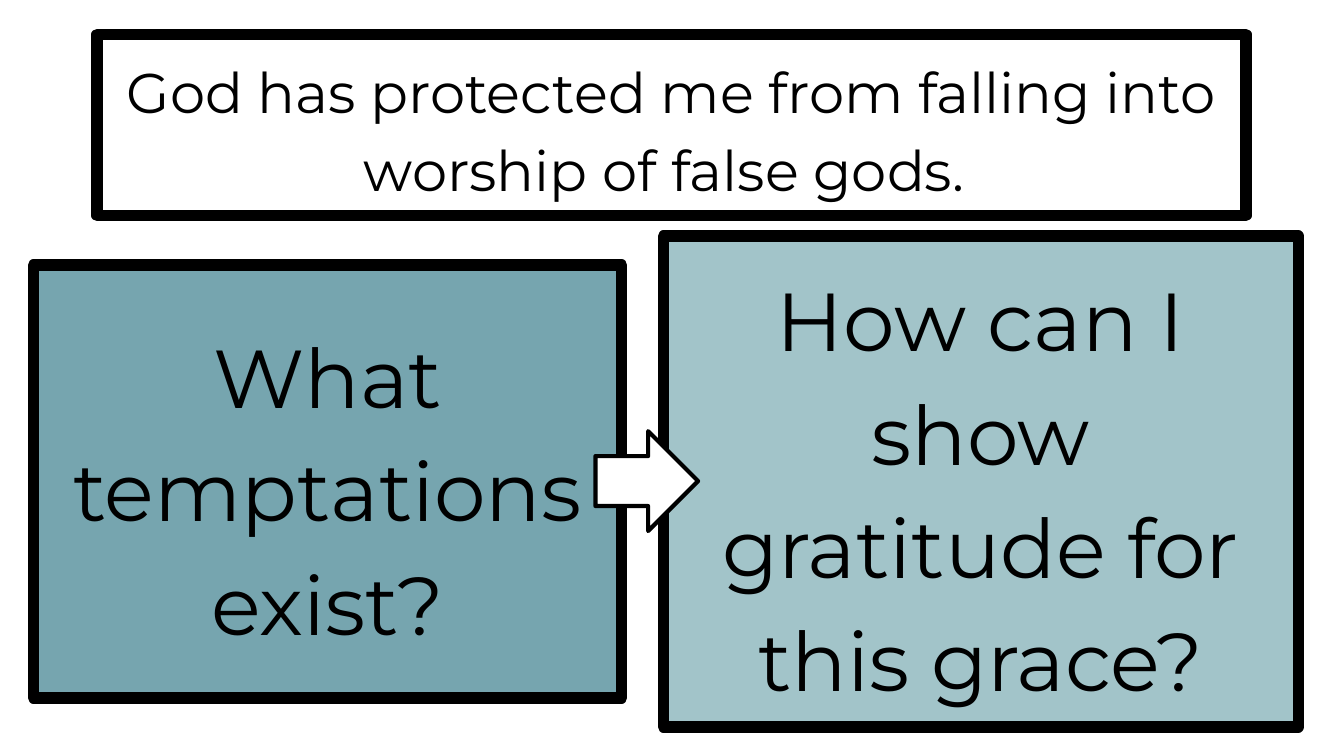
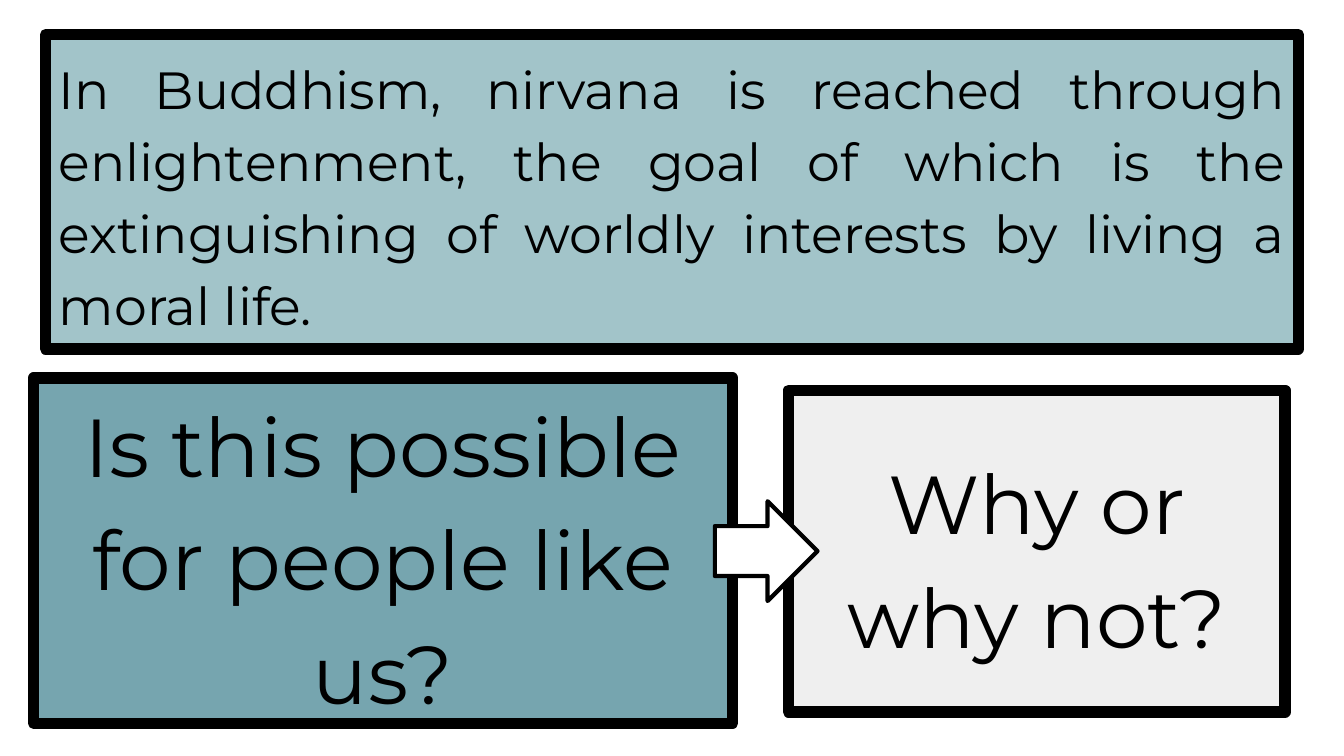
from pptx import Presentation
from pptx.dml.color import RGBColor
from pptx.enum.shapes import MSO_SHAPE
from pptx.enum.text import MSO_ANCHOR, PP_ALIGN
from pptx.util import Pt

WHITE, BLACK, GREY = "FFFFFF", "000000", "EFEFEF"
TEAL, PALE = "76A5AF", "A2C4C9"
FONT = "Montserrat"


def color(code):
    return RGBColor.from_string(code)


class Deck:
    """Holds the shared style and the current slide."""

    def __init__(self):
        self.prs = Presentation()
        self.prs.slide_width, self.prs.slide_height = Pt(720), Pt(405)
        self.slide = None

    def page(self):
        self.slide = self.prs.slides.add_slide(self.prs.slide_layouts[6])

    def shape(self, kind, area, fill, width):
        item = self.slide.shapes.add_shape(kind, *map(Pt, area))
        item.shadow.inherit = False
        item.fill.solid()
        item.fill.fore_color.rgb = color(fill)
        item.line.color.rgb = color(BLACK)
        item.line.width = Pt(width)
        return item

    def box(self, text, area, fill, size=44, align=PP_ALIGN.CENTER):
        frame = self.shape(MSO_SHAPE.RECTANGLE, area, fill, 6).text_frame
        frame.word_wrap = True
        frame.vertical_anchor = MSO_ANCHOR.MIDDLE
        frame.margin_left = frame.margin_right = Pt(7.2)
        frame.margin_top = frame.margin_bottom = Pt(7.2)
        para = frame.paragraphs[0]
        para.text = text
        para.alignment = align
        para.line_spacing = 1.15
        para.space_after = Pt(12)
        para.font.name = FONT
        para.font.size = Pt(size)
        para.font.color.rgb = color(BLACK)

    def arrow(self, left, top):
        self.shape(MSO_SHAPE.RIGHT_ARROW, (left, top, 55, 53.5), WHITE, 2.25)


def main():
    deck = Deck()

    # Protection from false gods
    deck.page()
    deck.box("God has protected me from falling into worship of false gods. ",
             (52, 18.5, 615.5, 97), WHITE, 30)
    deck.box("What temptations exist?", (18, 142, 315, 232), TEAL)
    deck.box("How can I show gratitude for this grace?",
             (355.5, 126.5, 340, 263), PALE)
    deck.arrow(319, 231)

    # Nirvana
    deck.page()
    deck.box("In Buddhism, nirvana is reached through enlightenment, the goal "
             "of which is the extinguishing of worldly interests by living a "
             "moral life.", (24.5, 18.5, 671, 168.5), PALE, 28,
             PP_ALIGN.JUSTIFY)
    deck.box("Is this possible for people like us?",
             (18, 202.5, 374.5, 185), TEAL)
    deck.box("Why or why not?", (422.5, 209, 266, 172.5), GREY)
    deck.arrow(383, 268.5)

    deck.prs.save("out.pptx")


if __name__ == "__main__":
    main()
